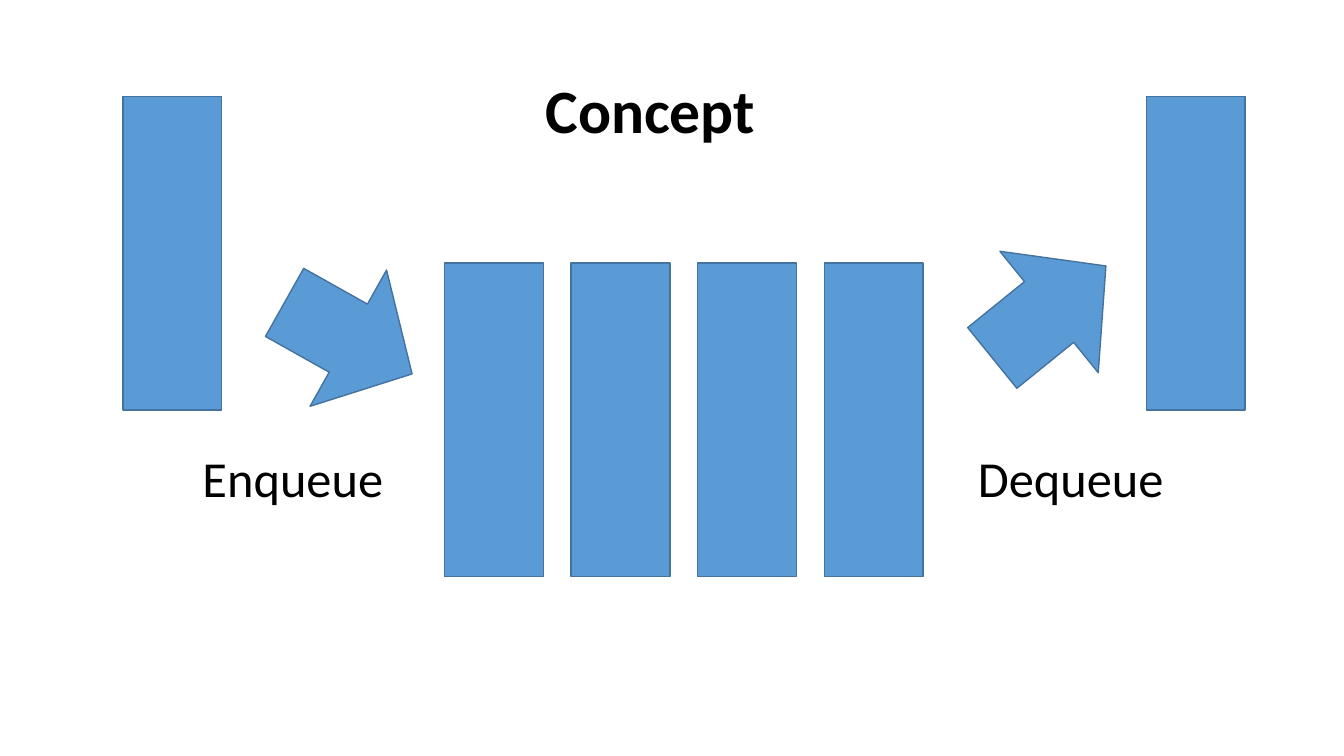
from pptx import Presentation
from pptx.dml.color import RGBColor
from pptx.enum.shapes import MSO_SHAPE as Shape
from pptx.enum.text import MSO_ANCHOR as Anchor, PP_ALIGN as Align
from pptx.util import Inches, Pt

BLUE = RGBColor(0x5B, 0x9B, 0xD5)
DARK_BLUE = RGBColor(0x43, 0x73, 0x9E)
BLACK = RGBColor(0, 0, 0)
ITEM_WIDTH, ITEM_HEIGHT = 0.98, 3.11
ITEM_PITCH = 1.255
QUEUE_LENGTH = 4


def add_words(frame, words, size, bold=False):
    """Write one left-aligned run of black text."""
    paragraph = frame.paragraphs[0]
    paragraph.alignment = Align.LEFT
    run = paragraph.add_run()
    run.text = words
    run.font.name = "Calibri"
    run.font.size = Pt(size)
    run.font.bold = bold
    run.font.color.rgb = BLACK
    return paragraph


def add_blue(slide, preset, left, top, width, height, rotation=0):
    """Draw a blue outlined preset shape."""
    figure = slide.shapes.add_shape(
        preset, Inches(left), Inches(top), Inches(width), Inches(height))
    figure.rotation = rotation
    figure.shadow.inherit = False
    figure.fill.solid()
    figure.fill.fore_color.rgb = BLUE
    figure.line.color.rgb = DARK_BLUE
    figure.line.width = Pt(1)


def add_item(slide, left, top):
    """Draw one queue item."""
    add_blue(slide, Shape.RECTANGLE, left, top, ITEM_WIDTH, ITEM_HEIGHT)


def add_title(slide, left, top, width, height):
    """Place the heading, indented towards the middle of the slide."""
    title = slide.shapes.title
    title.left, title.top = Inches(left), Inches(top)
    title.width, title.height = Inches(width), Inches(height)
    frame = title.text_frame
    frame.vertical_anchor = Anchor.MIDDLE
    frame.margin_left = Inches(4.49)
    add_words(frame, "Concept", 44, bold=True).line_spacing = 0.9


def add_queue(slide, left, top):
    """Draw the row of waiting items."""
    for position in range(QUEUE_LENGTH):
        add_item(slide, left + position * ITEM_PITCH, top)


def add_operation(slide, left, top, item_x, arrow_x, arrow_y, rotation,
                  caption, caption_x, caption_width):
    """Draw a moving item with its arrow and caption."""
    add_item(slide, left + item_x, top)
    add_blue(slide, Shape.RIGHT_ARROW, left + arrow_x, top + arrow_y,
             1.45, 1.55, rotation)
    label = slide.shapes.add_textbox(
        Inches(left + caption_x), Inches(top + 3.43),
        Inches(caption_width), Inches(0.71))
    label.text_frame.word_wrap = False
    add_words(label.text_frame, caption, 36)


def main():
    """Build the queue concept slide."""
    deck = Presentation()
    deck.slide_width, deck.slide_height = Inches(13.33), Inches(7.5)
    slide = deck.slides.add_slide(deck.slide_layouts[5])
    add_title(slide, 0.92, 0.4, 11.5, 1.45)
    add_queue(slide, 4.41, 2.61)
    add_operation(slide, 1.22, 0.96, 0, 1.51, 1.62, 29.3,
                  "Enqueue", 0.69, 2.01)
    add_operation(slide, 9.6, 0.96, 1.77, 0.08, 1.36, 321,
                  "Dequeue", 0, 2.06)
    deck.save("out.pptx")


if __name__ == "__main__":
    main()
